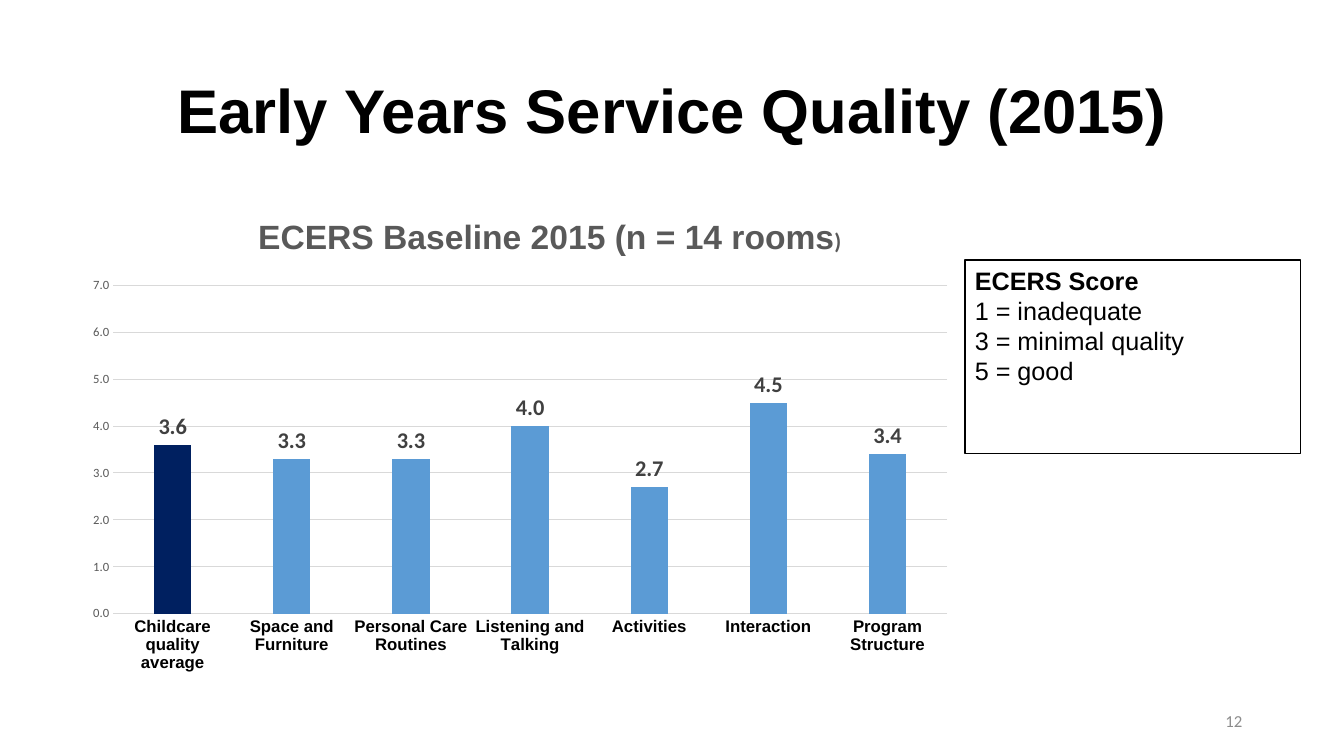
from dataclasses import dataclass

from lxml.etree import SubElement
from pptx import Presentation
from pptx.chart.chart import Chart
from pptx.chart.data import CategoryChartData
from pptx.dml.color import RGBColor
from pptx.enum.chart import XL_CHART_TYPE, XL_LABEL_POSITION, XL_TICK_MARK
from pptx.enum.shapes import MSO_SHAPE
from pptx.enum.text import MSO_ANCHOR, PP_ALIGN
from pptx.oxml.ns import qn
from pptx.slide import Slide
from pptx.util import Inches, Pt

BLACK = "000000"
WHITE = "FFFFFF"
GRID_GREY = "D9D9D9"
AXIS_GREY = "595959"
LABEL_GREY = "404040"
NUMBER_GREY = "8C8C8C"
BAR_BLUE = "5B9BD5"
AVERAGE_NAVY = "002060"


@dataclass
class Score:
    category: str
    value: float


SCORES = [
    Score("Childcare quality average", 3.6),
    Score("Space and Furniture", 3.3),
    Score("Personal Care Routines", 3.3),
    Score("Listening and Talking", 4.0),
    Score("Activities", 2.7),
    Score("Interaction", 4.5),
    Score("Program Structure", 3.4),
]
SCALE = ["ECERS Score", "1 = inadequate", "3 = minimal quality", "5 = good"]


def color(value: str) -> RGBColor:
    return RGBColor.from_string(value)


def style_font(font, name: str, size: float, font_color: str, bold: bool = False) -> None:
    font.name = name
    font.size = Pt(size)
    font.bold = bold
    font.color.rgb = color(font_color)


def style_line(line, line_color: str, width: float) -> None:
    line.color.rgb = color(line_color)
    line.width = Pt(width)


def set_layout(parent, position: int, **settings) -> None:
    """Place a chart part by fractions of the chart area."""
    layout = parent.find(qn("c:layout"))
    if layout is None:
        layout = parent.makeelement(qn("c:layout"), {})
        parent.insert(position, layout)
    manual = SubElement(layout, qn("c:manualLayout"))
    for tag, value in settings.items():
        SubElement(manual, qn(f"c:{tag}")).set("val", str(value))


def add_title(slide: Slide) -> None:
    title = slide.shapes.title
    title.left, title.top = Inches(0.92), Inches(0.4)
    title.width, title.height = Inches(11.5), Inches(1.45)
    title.text_frame.text = "Early Years Service Quality (2015)"
    title.text_frame.vertical_anchor = MSO_ANCHOR.MIDDLE
    paragraph = title.text_frame.paragraphs[0]
    paragraph.alignment = PP_ALIGN.CENTER
    paragraph.line_spacing = 0.9
    style_font(paragraph.font, "Arial", 44, BLACK, bold=True)


def style_chart_title(chart: Chart) -> None:
    paragraph = chart.chart_title.text_frame.paragraphs[0]
    heading = paragraph.add_run()
    heading.text = "ECERS Baseline 2015 (n = 14 rooms"
    style_font(heading.font, "Arial", 24, AXIS_GREY, bold=True)
    bracket = paragraph.add_run()
    bracket.text = ")"
    style_font(bracket.font, "Calibri", 16, AXIS_GREY, bold=True)
    set_layout(chart.chart_title._element, 1, xMode="edge", yMode="edge", x=0.2, y=0.02)


def style_axes(chart: Chart) -> None:
    for axis in (chart.category_axis, chart.value_axis):
        axis.major_tick_mark = XL_TICK_MARK.NONE
        axis.minor_tick_mark = XL_TICK_MARK.NONE

    style_font(chart.category_axis.tick_labels.font, "Arial", 12, BLACK, bold=True)
    style_line(chart.category_axis.format.line, GRID_GREY, 0.75)

    value_axis = chart.value_axis
    value_axis.minimum_scale, value_axis.maximum_scale = 0, 7
    value_axis.major_unit = 1
    value_axis.format.line.fill.background()
    style_line(value_axis.major_gridlines.format.line, GRID_GREY, 0.75)
    value_axis.tick_labels.number_format = "0.0"
    value_axis.tick_labels.number_format_is_linked = False
    style_font(value_axis.tick_labels.font, "Calibri", 9, AXIS_GREY)


def style_bars(chart: Chart) -> None:
    plot = chart.plots[0]
    plot.gap_width = 219
    plot.overlap = -27
    plot.vary_by_categories = False

    series = plot.series[0]
    average = series.points[0]
    for bar, fill in ((series, BAR_BLUE), (average, AVERAGE_NAVY)):
        bar.format.fill.solid()
        bar.format.fill.fore_color.rgb = color(fill)

    labels = series.data_labels
    labels.show_value = True
    labels.position = XL_LABEL_POSITION.OUTSIDE_END
    labels.number_format = "0.0"
    labels.number_format_is_linked = False
    style_font(labels.font, "Calibri", 16, LABEL_GREY, bold=True)


def add_score_chart(slide: Slide) -> None:
    data = CategoryChartData(number_format="0.0")
    data.categories = [score.category for score in SCORES]
    data.add_series("Series 1", [score.value for score in SCORES])
    chart = slide.shapes.add_chart(
        XL_CHART_TYPE.COLUMN_CLUSTERED,
        Inches(0.77), Inches(2.03), Inches(8.8), Inches(4.72), data,
    ).chart
    chart.has_legend = False
    style_font(chart.font, "Calibri", 10, BLACK)
    style_chart_title(chart)
    style_axes(chart)
    style_bars(chart)
    plot_area = chart._chartSpace.chart.plotArea
    set_layout(plot_area, 0, layoutTarget="inner", xMode="edge", yMode="edge",
               x=0.04, y=0.17, w=0.94, h=0.69)


def add_scale_box(slide: Slide) -> None:
    box = slide.shapes.add_shape(
        MSO_SHAPE.RECTANGLE, Inches(9.57), Inches(2.58), Inches(3.33), Inches(1.92))
    box.shadow.inherit = False
    box.fill.solid()
    box.fill.fore_color.rgb = color(WHITE)
    style_line(box.line, BLACK, 1)
    frame = box.text_frame
    frame.word_wrap = True
    frame.vertical_anchor = MSO_ANCHOR.TOP
    frame.text = "\n".join(SCALE)
    for index, paragraph in enumerate(frame.paragraphs):
        paragraph.alignment = PP_ALIGN.LEFT
        style_font(paragraph.font, "Arial", 18, BLACK, bold=index == 0)


def add_slide_number(slide: Slide) -> None:
    box = slide.shapes.add_textbox(Inches(9.42), Inches(6.95), Inches(3), Inches(0.4))
    frame = box.text_frame
    frame.word_wrap = True
    frame.vertical_anchor = MSO_ANCHOR.MIDDLE
    frame.text = "12"
    paragraph = frame.paragraphs[0]
    paragraph.alignment = PP_ALIGN.RIGHT
    style_font(paragraph.font, "Calibri", 12, NUMBER_GREY)


def main() -> None:
    presentation = Presentation()
    presentation.slide_width = Inches(13.33)
    presentation.slide_height = Inches(7.5)
    title_only = presentation.slide_layouts[5]
    slide = presentation.slides.add_slide(title_only)

    add_title(slide)
    add_slide_number(slide)
    add_score_chart(slide)
    add_scale_box(slide)
    presentation.save("out.pptx")


if __name__ == "__main__":
    main()
